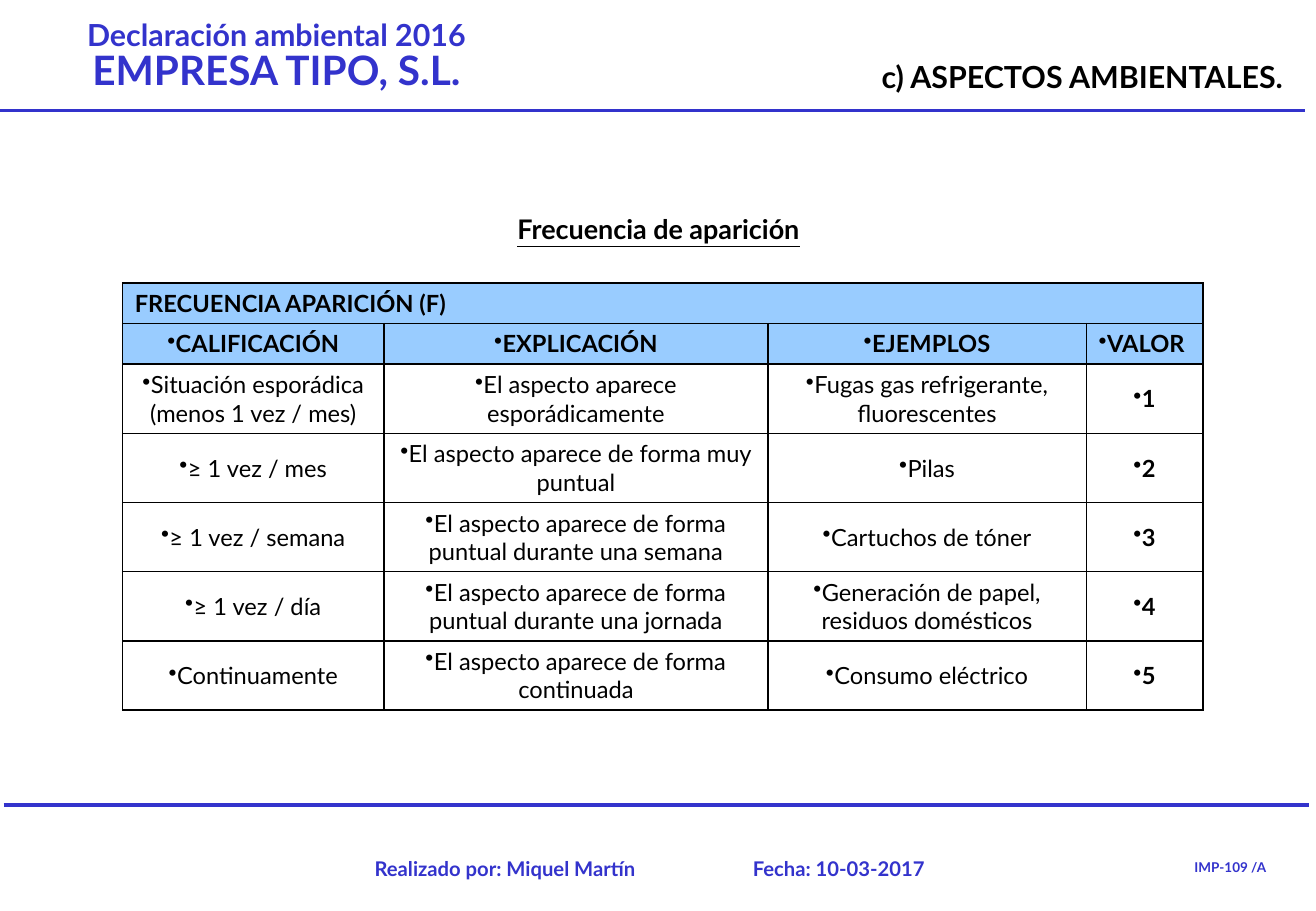
from dataclasses import dataclass

from lxml.etree import SubElement
from pptx import Presentation
from pptx.dml.color import RGBColor
from pptx.enum.shapes import MSO_CONNECTOR as Connector
from pptx.enum.text import MSO_ANCHOR as Anchor, MSO_AUTO_SIZE as AutoSize, PP_ALIGN as Align
from pptx.oxml.ns import qn
from pptx.util import Inches, Pt


@dataclass(frozen=True)
class Theme:
    font: str = "Lato"
    blue: str = "3333CC"
    black: str = "000000"
    header_fill: str = "99CCFF"
    company_size: int = 24
    heading_size: int = 18
    subtitle_size: int = 16
    table_size: int = 14
    footer_size: int = 12
    code_size: int = 8
    rule_width: float = 2.25
    border_width: float = 1


THEME = Theme()

SECTION = "c) ASPECTOS AMBIENTALES. "
SUBTITLE = "Frecuencia de aparición"
LETTERHEAD = [
    ("Declaración ambiental 2016", THEME.heading_size),
    ("EMPRESA TIPO, S.L.", THEME.company_size),
]
# text, (left, top, width, height), size, alignment
FOOTERS = [
    ("Realizado por: Miquel Martín", (2.83, 7, 2.5, 0.25), THEME.footer_size, Align.RIGHT),
    ("Fecha: 10-03-2017 ", (5.92, 7, 1.83, 0.25), THEME.footer_size, Align.RIGHT),
    ("IMP-109 /A", (9.5, 7.02, 1.25, 0.25), THEME.code_size, Align.CENTER),
]
RULES = [(0, 0.91), (0.03, 6.63)]
RULE_LENGTH = 10.74

TABLE_TITLE = "FRECUENCIA APARICIÓN (F)"
TABLE_ROWS = [
    ("CALIFICACIÓN", "EXPLICACIÓN", "EJEMPLOS", "VALOR "),
    ("Situación esporádica (menos 1 vez / mes)", "El aspecto aparece esporádicamente",
     "Fugas gas refrigerante, fluorescentes", "1"),
    ("≥ 1 vez / mes", "El aspecto aparece de forma muy puntual", "Pilas", "2"),
    ("≥ 1 vez / semana", "El aspecto aparece de forma puntual durante una semana",
     "Cartuchos de tóner", "3"),
    ("≥ 1 vez / día", "El aspecto aparece de forma puntual durante una jornada",
     "Generación de papel, residuos domésticos", "4"),
    ("Continuamente", "El aspecto aparece de forma continuada", "Consumo eléctrico", "5"),
]
COLUMN_WIDTHS = [2.15, 3.16, 2.62, 0.96]
HEADER_HEIGHT, BODY_HEIGHT = 0.33, 0.57


def write(para, text, *, size, color=THEME.black, bold=True, underline=False,
          align=Align.CENTER, line_spacing=None, bullet=False):
    if bullet:
        properties = para._p.get_or_add_pPr()
        properties.set("marL", "0")
        properties.set("indent", "0")
        SubElement(properties, qn("a:buChar"), char="•")
    para.alignment = align
    para.space_before = Pt(0)
    if line_spacing:
        para.line_spacing = line_spacing
    span = para.add_run()
    span.text = text
    font = span.font
    font.name, font.size, font.bold = THEME.font, Pt(size), bold
    font.underline = underline
    font.color.rgb = RGBColor.from_string(color)


def prepare(box, bounds, anchor=Anchor.TOP):
    """Place a text shape, wrap its text and return the text frame."""
    box.left, box.top, box.width, box.height = map(Inches, bounds)
    frame = box.text_frame
    frame.word_wrap = True
    frame.auto_size = AutoSize.NONE
    frame.vertical_anchor = anchor
    return frame


def add_box(page, bounds, anchor=Anchor.TOP):
    return prepare(page.shapes.add_textbox(0, 0, 0, 0), bounds, anchor)


def add_rule(page, left, top):
    rule = page.shapes.add_connector(Connector.STRAIGHT, Inches(left), Inches(top),
                                     Inches(left + RULE_LENGTH), Inches(top))
    rule.line.color.rgb = RGBColor.from_string(THEME.blue)
    rule.line.width = Pt(THEME.rule_width)
    SubElement(rule._element.spPr, qn("a:effectLst"))


def style_cell(cell, is_header):
    properties = cell._tc.get_or_add_tcPr()
    for side in ("lnL", "lnR", "lnT", "lnB"):
        border = SubElement(properties, qn(f"a:{side}"), w=str(Pt(THEME.border_width)))
        SubElement(SubElement(border, qn("a:solidFill")), qn("a:srgbClr"), val=THEME.black)
    if is_header:
        cell.fill.solid()
        cell.fill.fore_color.rgb = RGBColor.from_string(THEME.header_fill)
    else:
        cell.fill.background()
        cell.vertical_anchor = Anchor.MIDDLE


def add_frequency_table(page):
    heights = [HEADER_HEIGHT] * 2 + [BODY_HEIGHT] * (len(TABLE_ROWS) - 1)
    table = page.shapes.add_table(
        len(heights), len(COLUMN_WIDTHS), Inches(1.01), Inches(2.33),
        Inches(sum(COLUMN_WIDTHS)), Inches(sum(heights))).table
    table.horz_banding = False
    for column, width in zip(table.columns, COLUMN_WIDTHS):
        column.width = Inches(width)
    for index, (row, height) in enumerate(zip(table.rows, heights)):
        row.height = Inches(height)
        for cell in row.cells:
            style_cell(cell, is_header=index < 2)
    title = table.cell(0, 0)
    title.merge(table.cell(0, len(COLUMN_WIDTHS) - 1))
    write(title.text_frame.paragraphs[0], TABLE_TITLE, size=THEME.table_size,
          align=Align.JUSTIFY)
    last_column = len(COLUMN_WIDTHS) - 1
    for row_index, texts in enumerate(TABLE_ROWS, start=1):
        for column_index, text in enumerate(texts):
            para = table.cell(row_index, column_index).text_frame.paragraphs[0]
            write(para, text, size=THEME.table_size, bullet=True,
                  bold=row_index == 1 or column_index == last_column)


def main():
    deck = Presentation()
    deck.slide_width, deck.slide_height = Inches(10.83), Inches(7.5)
    page = deck.slides.add_slide(deck.slide_layouts[5])

    for left, top in RULES:
        add_rule(page, left, top)

    letterhead = add_box(page, (0.08, 0.13, 4.39, 0.7))
    for index, (text, size) in enumerate(LETTERHEAD):
        para = letterhead.add_paragraph() if index else letterhead.paragraphs[0]
        write(para, text, size=size, color=THEME.blue, line_spacing=0.85)

    for text, bounds, size, align in FOOTERS:
        write(add_box(page, bounds).paragraphs[0], text, size=size,
              color=THEME.blue, align=align)

    section = prepare(page.shapes.title, (4.81, 0.43, 5.91, 0.4))
    write(section.paragraphs[0], SECTION, size=THEME.heading_size, align=Align.RIGHT)

    subtitle = add_box(page, (3.45, 1.7, 3.94, 0.37), Anchor.MIDDLE)
    write(subtitle.paragraphs[0], SUBTITLE, size=THEME.subtitle_size, underline=True)

    add_frequency_table(page)
    deck.save("out.pptx")


if __name__ == "__main__":
    main()
